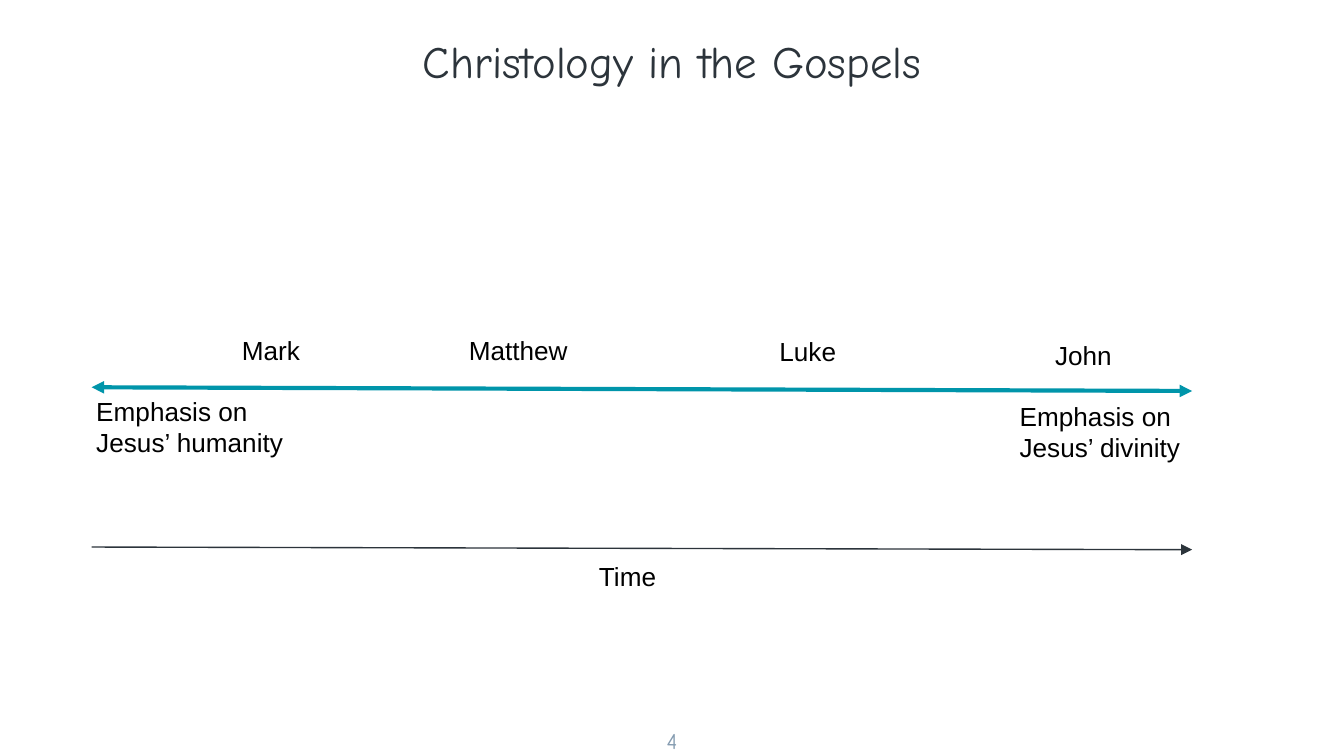
import pptx
import pptx.dml.color
import pptx.enum.shapes
import pptx.enum.text
import pptx.oxml
import pptx.oxml.ns
import pptx.util
import lxml.etree

Cm = pptx.util.Cm
Pt = pptx.util.Pt
COLORS = {
    "background": "FFFFFF",
    "heading": "2C343B",
    "number": "859CB1",
    "accent": "0095AA",
    "text": "000000",
}


class SlideBuilder:
    heading_font = "Comic Neue"
    body_font = "Arial"

    def __init__(self, presentation):
        self.slide = presentation.slides.add_slide(presentation.slide_layouts[5])
        fill = self.slide.background.fill
        fill.solid()
        fill.fore_color.rgb = self.color("background")

    def color(self, name):
        return pptx.dml.color.RGBColor.from_string(COLORS[name])

    def set_text(self, shape, text, size, font, color, centered=False, inset=None):
        frame = shape.text_frame
        frame.word_wrap = True
        if inset is not None:
            frame.margin_left = frame.margin_right = Cm(inset)
            frame.margin_top = frame.margin_bottom = Cm(inset)
        frame.text = text
        paragraph = frame.paragraphs[0]
        alignment = pptx.enum.text.PP_ALIGN
        paragraph.alignment = alignment.CENTER if centered else alignment.LEFT
        for run in paragraph.runs:
            run.font.size = Pt(size)
            run.font.name = font
            run.font.color.rgb = self.color(color)

    def title(self, text, left, top, width, height):
        shape = self.slide.shapes.title
        shape.left, shape.top = Cm(left), Cm(top)
        shape.width, shape.height = Cm(width), Cm(height)
        self.set_text(shape, text, 24, self.heading_font, "heading", True, 0.25)
        shape.text_frame.vertical_anchor = pptx.enum.text.MSO_ANCHOR.MIDDLE

    def text_box(self, left, top, width, height):
        return self.slide.shapes.add_textbox(Cm(left), Cm(top), Cm(width), Cm(height))

    def page_number(self, text, left, top, width, height):
        shape = self.text_box(left, top, width, height)
        self.set_text(shape, text, 12, self.heading_font, "number", True, 0.25)

    def label(self, text, left, top, width=1.75, height=0.86):
        shape = self.text_box(left, top, width, height)
        self.set_text(shape, text, 14, self.body_font, "text")
        shape.text_frame.auto_size = pptx.enum.text.MSO_AUTO_SIZE.SHAPE_TO_FIT_TEXT

    def arrow(self, start, end, color, width, ends):
        connector = self.slide.shapes.add_connector(
            pptx.enum.shapes.MSO_CONNECTOR.STRAIGHT, *map(Cm, start + end)
        )
        connector.line.color.rgb = self.color(color)
        connector.line.width = Pt(width)
        properties = connector._element.spPr
        line = properties.find(pptx.oxml.ns.qn("a:ln"))
        for end_name in ends:
            tag = pptx.oxml.ns.qn(f"a:{end_name}")
            lxml.etree.SubElement(line, tag, type="triangle")
        lxml.etree.SubElement(properties, pptx.oxml.ns.qn("a:effectLst"))


def main():
    presentation = pptx.Presentation()
    presentation.slide_width = Cm(25.4)
    presentation.slide_height = Cm(14.29)
    builder = SlideBuilder(presentation)

    builder.title("Christology in the Gospels", 1.27, -0.05, 22.86, 2.39)
    builder.page_number("4", 11.94, 13.49, 1.52, 0.79)

    axis_left, axis_right = 1.73, 22.53
    builder.arrow(
        (axis_left, 7.32), (axis_right, 7.39), "accent", 2.25, ["headEnd", "tailEnd"]
    )
    builder.label("Emphasis on Jesus’ humanity", 1.57, 7.34, 4.85, 1.45)
    builder.label("Emphasis on Jesus’ divinity", 19.02, 7.44, 4.85, 1.45)

    gospels = [
        ("Mark", 4.32, 6.2, 1.75),
        ("Matthew", 8.61, 6.2, 2.92),
        ("Luke", 14.48, 6.22, 1.75),
        ("John", 19.69, 6.3, 1.75),
    ]
    for name, left, top, width in gospels:
        builder.label(name, left, top, width)

    builder.arrow(
        (axis_left, 10.34), (axis_right, 10.39), "heading", 0.75, ["tailEnd"]
    )
    builder.label("Time", 11.07, 10.46)

    presentation.save("out.pptx")


if __name__ == "__main__":
    main()
